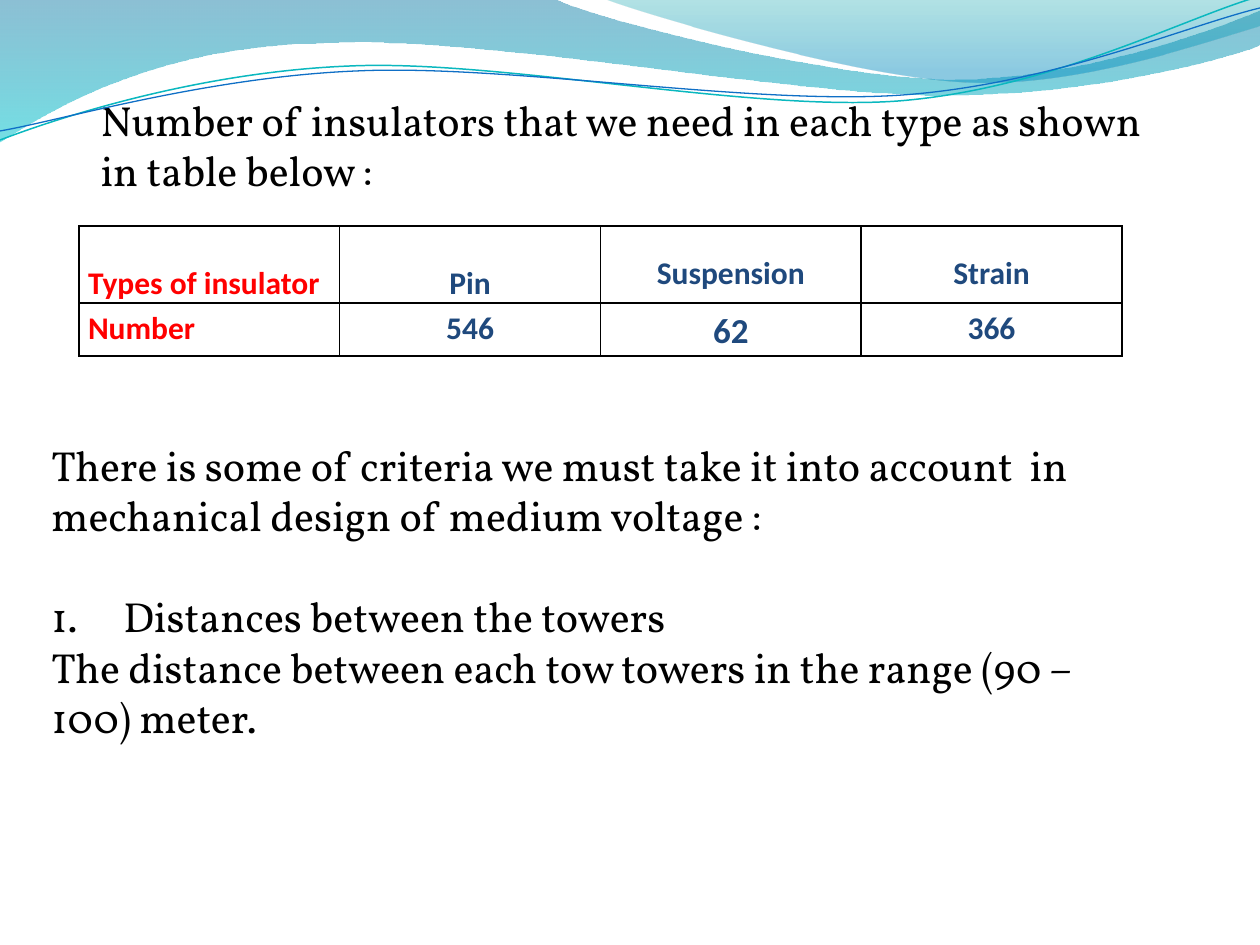
from dataclasses import dataclass

from lxml.etree import SubElement
from pptx import Presentation
from pptx.dml.color import RGBColor as Rgb
from pptx.enum.text import MSO_ANCHOR as Anchor, MSO_AUTO_SIZE as AutoSize, PP_ALIGN as Align
from pptx.oxml import parse_xml
from pptx.oxml.ns import nsdecls, qn
from pptx.util import Inches, Pt

PX = Inches(1) / 126
TITLE_ONLY = 5


@dataclass(frozen=True)
class Theme:
    """Colours, fonts and type sizes of the slide."""
    body_font: str = "Vollkorn"
    table_font: str = "Calibri"
    body_size: int = 24
    cell_size: int = 18
    large_size: int = 20
    ink: str = "000000"
    label: str = "FF0000"
    value: str = "1F497D"
    ribbon: tuple = ((0, "0074A1", 45), (100, "00C6CF", 55))
    crest: tuple = ((0, "00A1A9", 30), (80, "008BBF", 45))
    teal_line: str = "0AB8BF"
    blue_line: str = "0F6FC6"


THEME = Theme()

RIBBON = [(0, 0), (554, -1), (600, 21, 837, 79, 955, 79), (1075, 79, 1207, 33, 1260, 11),
          (1261, 45), (1239, 55, 1096, 96, 940, 95), (784, 95, 481, 35, 324, 43),
          (163, 45, 58, 105, -1, 142), (0, 0)]
CREST = [(604, -1), (641, 14, 859, 78, 969, 82), (1079, 87, 1211, 40, 1260, 26),
         (1260, 0), (604, -1)]
TEAL_WAVE = [(0, 140), (60, 117, 199, 72, 349, 66), (498, 59, 747, 112, 898, 101),
             (1050, 89, 1182, 19, 1257, -3)]
BLUE_WAVE = [(0, 131), (59, 121, 207, 77, 357, 71), (508, 64, 752, 106, 903, 95),
             (1053, 84, 1186, 26, 1260, 8)]


def px(length):
    """Turn pixels into whole EMU."""
    return round(length * PX)


def style_font(font, name, size, color, bold=False):
    """Set the face, size, colour and weight of a font."""
    font.name, font.size, font.bold = name, Pt(size), bold
    font.color.rgb = Rgb.from_string(color)


def bend_segments(outline, steps):
    """Join each run of three lines that stands for a curve into one cubic."""
    segments = iter(list(outline._element.iter(qn("a:lnTo"))))
    for step in steps[1:]:
        segment = next(segments)
        if len(step) == 6:
            curve = parse_xml(f'<a:cubicBezTo {nsdecls("a")}/>')
            segment.addprevious(curve)
            for part in (segment, next(segments), next(segments)):
                curve.append(part[0])
                part.getparent().remove(part)


def add_outline(page, origin, steps, closed):
    """Add a freeform of lines and cubic curves, measured from the origin."""
    left, top = origin
    points = [(px(left + x), px(top + y)) for step in steps
              for x, y in zip(step[::2], step[1::2])]
    builder = page.shapes.build_freeform(*points[0])
    builder.add_line_segments(points[1:], close=closed)
    outline = builder.convert_to_shape()
    bend_segments(outline, steps)
    outline.shadow.inherit = False
    return outline


def add_band(page, origin, steps, stops):
    """Add a closed band with a translucent top-to-bottom gradient."""
    band = add_outline(page, origin, steps, True)
    band.line.fill.background()
    marks = "".join(
        f'<a:gs pos="{place * 1000}"><a:srgbClr val="{color}">'
        f'<a:alpha val="{alpha * 1000}"/></a:srgbClr></a:gs>' for place, color, alpha in stops)
    gradient = parse_xml(f'<a:gradFill {nsdecls("a")} rotWithShape="1"><a:gsLst>{marks}</a:gsLst>'
                         '<a:lin ang="5400000" scaled="0"/></a:gradFill>')
    band._element.spPr.find(qn("a:custGeom")).addnext(gradient)


def add_wave(page, origin, steps, color, width):
    """Add an open wavy line."""
    wave = add_outline(page, origin, steps, False)
    wave.fill.background()
    wave.line.color.rgb = Rgb.from_string(color)
    wave.line.width = Pt(width)


def add_header_waves(page, origin):
    """Draw the decorative bands and lines at the top of the page."""
    add_band(page, origin, RIBBON, THEME.ribbon)
    add_band(page, origin, CREST, THEME.crest)
    add_wave(page, origin, TEAL_WAVE, THEME.teal_line, 0.85)
    add_wave(page, origin, BLUE_WAVE, THEME.blue_line, 0.75)


def set_title(page, box, text):
    """Place the title placeholder and fill it."""
    title = page.shapes.title
    title.left, title.top, title.width, title.height = map(px, box)
    frame = title.text_frame
    frame.text = text
    frame.word_wrap, frame.auto_size = True, AutoSize.NONE
    frame.vertical_anchor = Anchor.TOP
    para = frame.paragraphs[0]
    para.alignment = Align.LEFT
    style_font(para.font, THEME.body_font, THEME.body_size, THEME.ink)


def add_borders(cell):
    """Draw a thin line on all four sides of a cell."""
    properties = cell._tc.get_or_add_tcPr()
    for index, side in enumerate(("lnL", "lnR", "lnT", "lnB")):
        line = parse_xml(f'<a:{side} {nsdecls("a")} w="12700"><a:solidFill>'
                         f'<a:srgbClr val="{THEME.ink}"/></a:solidFill></a:{side}>')
        properties.insert(index, line)


def fill_cell(cell, text, drop, size, is_label):
    """Write one table cell, its text lowered by the drop."""
    cell.fill.background()
    add_borders(cell)
    cell.margin_left = cell.margin_right = px(9)
    cell.margin_top, cell.margin_bottom = px(drop), 0
    cell.text = text
    para = cell.text_frame.paragraphs[0]
    para.line_spacing = 1.15
    para.alignment = Align.LEFT if is_label else Align.CENTER
    color = THEME.label if is_label else THEME.value
    style_font(para.font, THEME.table_font, size, color, bold=True)


def add_insulator_table(page, box):
    """Add the table of insulator counts."""
    normal, large = THEME.cell_size, THEME.large_size
    rows = [
        (77, [("Types of insulator", 33, normal), ("Pin", 33, normal),
              ("Suspension", 23, normal), ("Strain", 23, normal)]),
        (53, [("Number", 0, normal), ("546", 0, normal), ("62", 0, large), ("366", 0, normal)]),
    ]
    table = page.shapes.add_table(len(rows), 4, *map(px, box)).table
    table.first_row = table.horz_banding = False
    for column in table.columns:
        column.width = px(box[2] / 4)
    for row_index, (height, entries) in enumerate(rows):
        table.rows[row_index].height = px(height)
        for column_index, entry in enumerate(entries):
            fill_cell(table.cell(row_index, column_index), *entry, column_index == 0)


def number_paragraph(para, indent):
    """Make a paragraph a numbered item with a hanging indent."""
    properties = para._p.get_or_add_pPr()
    properties.set("marL", str(px(indent)))
    properties.set("indent", str(-px(indent)))
    SubElement(properties, qn("a:buFont"), typeface="+mj-lt")
    SubElement(properties, qn("a:buAutoNum"), type="arabicPeriod")


def add_criteria(page, box):
    """Add the text on the mechanical design criteria."""
    frame = page.shapes.add_textbox(*map(px, box)).text_frame
    frame.word_wrap = True
    frame.text = "\n".join((
        "There is some of criteria we must take it into account  in mechanical design of medium voltage :",
        "Distances between the towers",
        "The distance between each tow towers in the range (90 – 100) meter."))
    for para in frame.paragraphs:
        style_font(para.font, THEME.body_font, THEME.body_size, THEME.ink)
    item = frame.paragraphs[1]
    item.space_before = Pt(29)
    number_paragraph(item, 72)


def main():
    """Build the deck and save it."""
    deck = Presentation()
    deck.slide_width, deck.slide_height = px(1260), px(945)
    page = deck.slides.add_slide(deck.slide_layouts[TITLE_ONLY])
    add_header_waves(page, (0, 0))
    set_title(page, (88, 88, 1082, 115),
              "Number of insulators that we need in each type as shown in table below :")
    add_insulator_table(page, (79, 226, 1043, 130))
    add_criteria(page, (39, 433, 1074, 318))
    deck.save("out.pptx")


if __name__ == "__main__":
    main()
